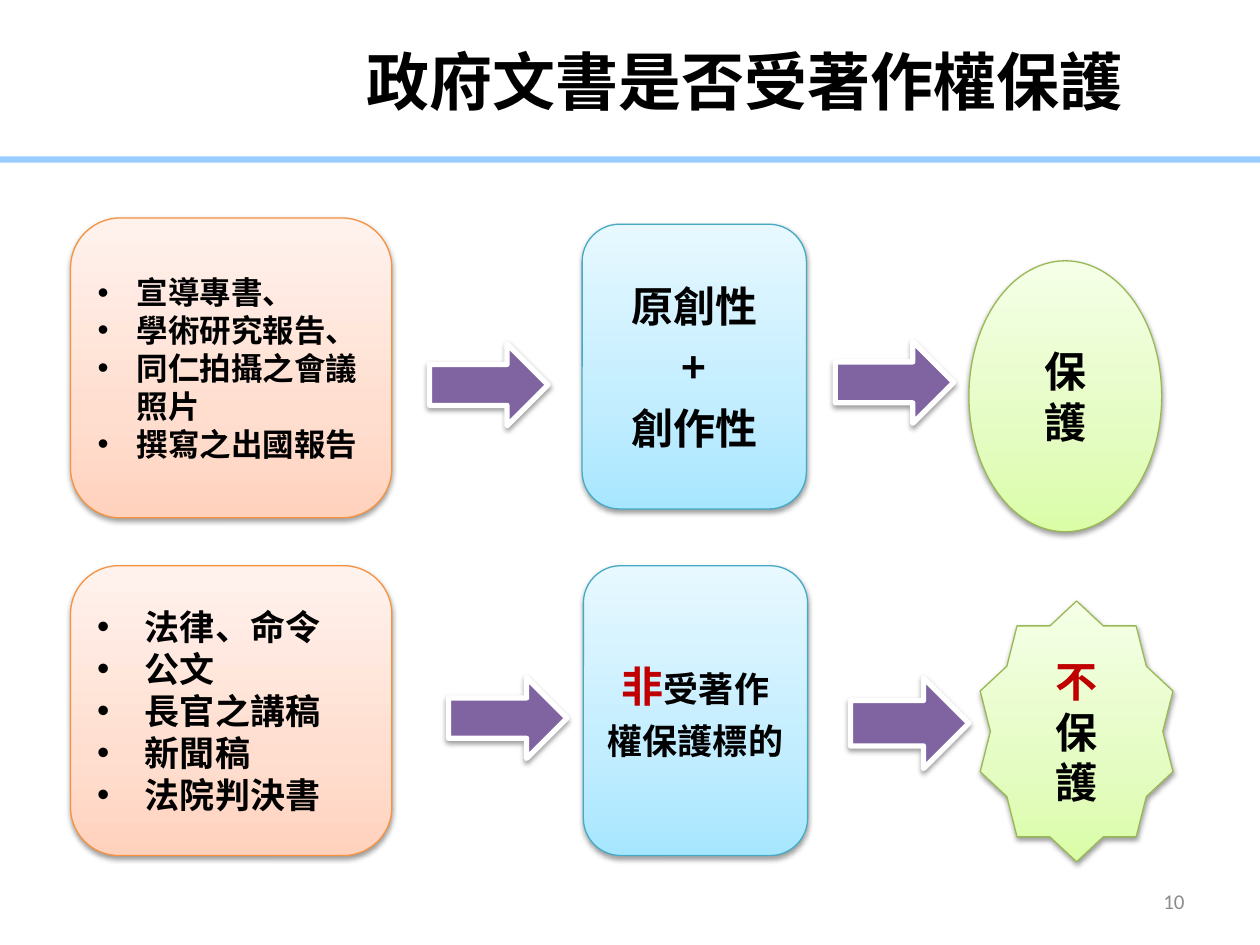
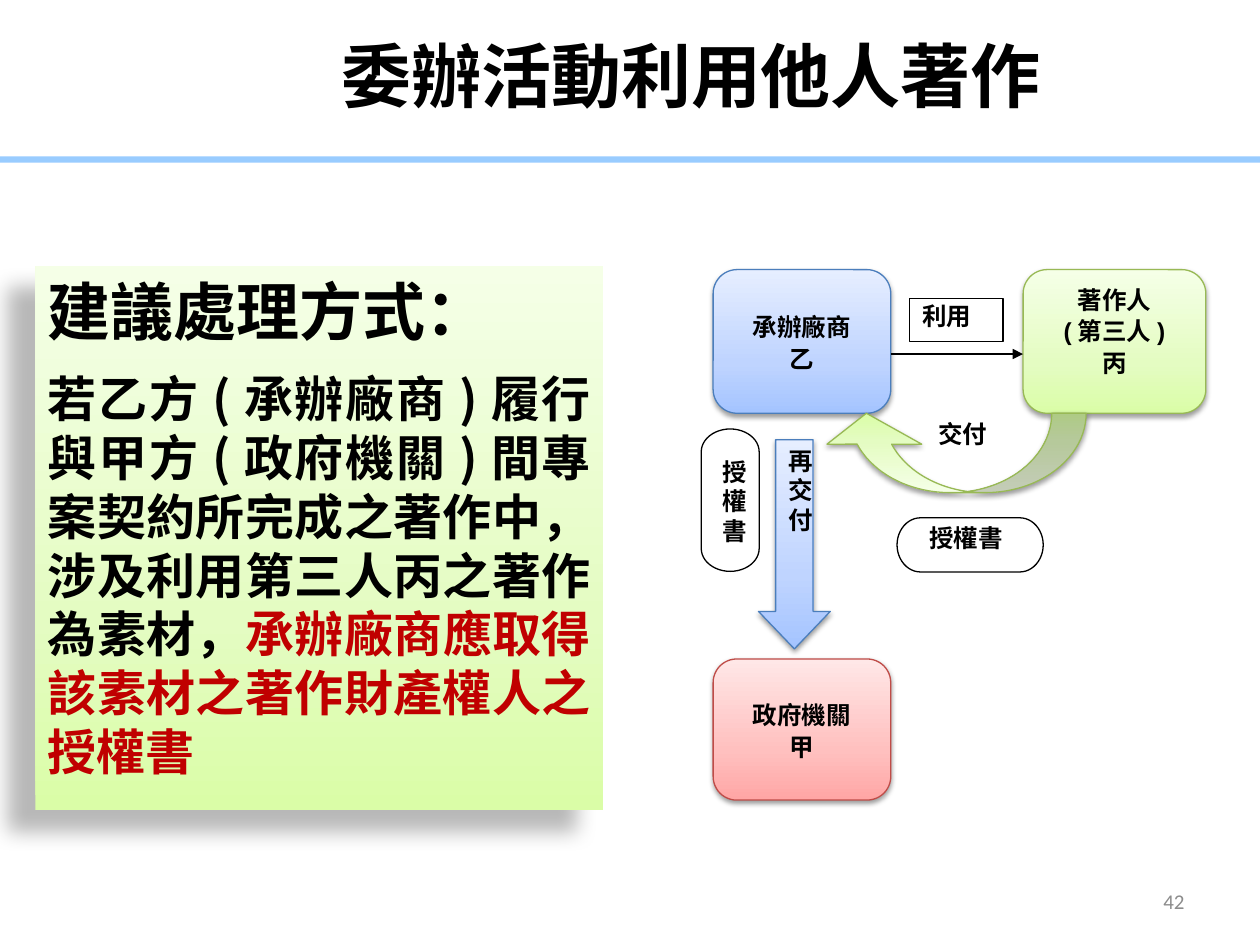
from copy import deepcopy
from dataclasses import dataclass
from typing import NamedTuple, Optional

from pptx import Presentation
from pptx.dml.color import RGBColor
from pptx.enum.shapes import MSO_CONNECTOR, MSO_SHAPE
from pptx.enum.text import MSO_ANCHOR, MSO_AUTO_SIZE, PP_ALIGN
from pptx.oxml.ns import qn
from pptx.oxml.xmlchemy import OxmlElement
from pptx.util import Emu, Inches, Pt

COLUMNS, ROWS = 100, 75
WIDTH, HEIGHT = Inches(10), Inches(7.5)
CJK, LATIN, NUMBER = "Noto Sans CJK SC", "Arial", "Calibri"
BLACK, WHITE, RED, GRAY = "000000", "FFFFFF", "C00000", "8C8C8C"
BAND, PURPLE = "99CCFF", "8064A2"
LEADING = 1.2
CENTER, LEFT, RIGHT, JUSTIFY = PP_ALIGN.CENTER, PP_ALIGN.LEFT, PP_ALIGN.RIGHT, PP_ALIGN.JUSTIFY
TOP, MIDDLE = MSO_ANCHOR.TOP, MSO_ANCHOR.MIDDLE


class Area(NamedTuple):
    """A place on the grid, in columns and rows."""
    left: float
    top: float
    width: float
    height: float


class Shadow(NamedTuple):
    """An outer shadow: opacity in percent, lengths in points, angle in degrees."""
    alpha: int
    blur: float
    distance: float
    angle: int


class Paint(NamedTuple):
    """Gradient colours from bottom to top, and the outline."""
    stops: tuple[str, str, str]
    line: str


class Span(NamedTuple):
    """A run of text."""
    text: str
    size: int
    color: str = BLACK
    font: str = CJK
    bold: bool = True


@dataclass
class Para:
    """A paragraph of spans, with its spacing in points and indent in inches."""
    spans: list[Span]
    align: Optional[int] = CENTER
    leading: float = 0
    before: float = 0
    after: float = 0
    indent: float = 0


@dataclass
class Block:
    """A preset shape with a gradient and text."""
    kind: MSO_SHAPE
    area: Area
    paint: Paint
    paras: list[Para]
    anchor: MSO_ANCHOR = MIDDLE
    adjustments: tuple[float, ...] = ()
    rotation: float = 0


SOFT = Shadow(38, 3.1, 1.6, 90)
DEEP = Shadow(28, 11.8, 19.7, 141)
ORANGE = Paint(("FFD2BD", "FFDED0", "FFF2ED"), "F69240")
GREEN = Paint(("DAFDA7", "E4FCC2", "F5FFE7"), "98B955")
AQUA = Paint(("A7E6FF", "C1EDFF", "E7F8FF"), "46AAC5")
BLUE = Paint(("A4C4FF", "BFD4FF", "E6EEFF"), "4B7EBC")
PINK = Paint(("FFA6A5", "FFC0BF", "FFE7E7"), "BF4C48")


def rgb(color: str) -> RGBColor:
    """Turn a hex string into a colour."""
    return RGBColor.from_string(color)


def across(columns: float) -> Emu:
    """Turn columns into a length."""
    return Emu(round(WIDTH * columns / COLUMNS))


def down(rows: float) -> Emu:
    """Turn rows into a length."""
    return Emu(round(HEIGHT * rows / ROWS))


def lengths(area: Area) -> tuple[Emu, Emu, Emu, Emu]:
    """Turn a grid area into lengths."""
    return across(area.left), down(area.top), across(area.width), down(area.height)


def place(shape, area: Area) -> None:
    """Move a placeholder to a grid area."""
    shape.left, shape.top, shape.width, shape.height = lengths(area)


def child(parent, tag: str, **attributes):
    """Append an XML element."""
    element = OxmlElement(tag)
    for name, value in attributes.items():
        element.set(name, str(value))
    parent.append(element)
    return element


def write(shape, paras: list[Para], anchor: MSO_ANCHOR = TOP) -> None:
    """Fill a shape with paragraphs, run by run."""
    frame = shape.text_frame
    frame.word_wrap = True
    frame.auto_size = MSO_AUTO_SIZE.NONE
    frame.vertical_anchor = anchor
    for index, item in enumerate(paras):
        para = frame.add_paragraph() if index else frame.paragraphs[0]
        properties = para._p.get_or_add_pPr()
        properties.set("marL", str(Inches(item.indent)))
        properties.set("indent", str(-Inches(item.indent)))
        if item.indent:
            child(properties, "a:buFont", typeface=LATIN)
            child(properties, "a:buChar", char="•")
        else:
            child(properties, "a:buNone")
        para.alignment = item.align
        para.line_spacing = Pt(item.leading or LEADING * max(span.size for span in item.spans))
        para.space_before, para.space_after = Pt(item.before), Pt(item.after)
        for span in item.spans:
            run = para.add_run()
            run.text = span.text
            run.font.size, run.font.bold = Pt(span.size), span.bold
            run.font.color.rgb = rgb(span.color)
            run.font.name = span.font
            child(run._r.get_or_add_rPr(), "a:ea", typeface=CJK)


def lines(texts: list[str], size: int, **options) -> list[Para]:
    """Make one paragraph for each text."""
    font = options.pop("font", CJK)
    return [Para([Span(text, size, font=font)], **options) for text in texts]


def cast(shape, shadow: Shadow) -> None:
    """Give a shape an outer shadow."""
    shape.shadow.inherit = False
    effects = shape._element.spPr.find(qn("a:effectLst"))
    outer = child(effects, "a:outerShdw", blurRad=Pt(shadow.blur), dist=Pt(shadow.distance),
                  dir=shadow.angle * 60000, algn="ctr", rotWithShape=0)
    child(child(outer, "a:srgbClr", val=BLACK), "a:alpha", val=shadow.alpha * 1000)


def shade(shape, colors: tuple[str, str, str]) -> None:
    """Fill a shape with a gradient that runs upwards."""
    shape.fill.gradient()
    shape.fill.gradient_angle = 90
    stops = next(shape._element.spPr.iter(qn("a:gsLst")))
    stops.append(deepcopy(stops[-1]))
    for stop, color, position in zip(shape.fill.gradient_stops, colors, (0, 0.35, 1)):
        stop.color.rgb, stop.position = rgb(color), position


def add_plain(page, kind: MSO_SHAPE, area: Area, fill: str, line: str = "", width: float = 0.75):
    """Draw a shape with a flat fill and no shadow."""
    shape = page.shapes.add_shape(kind, *lengths(area))
    shape.fill.solid()
    shape.fill.fore_color.rgb = rgb(fill)
    if line:
        shape.line.color.rgb, shape.line.width = rgb(line), Pt(width)
    else:
        shape.line.fill.background()
    shape.shadow.inherit = False
    return shape


def add_block(page, block: Block) -> None:
    """Draw a gradient block with its text."""
    shape = page.shapes.add_shape(block.kind, *lengths(block.area))
    for index, value in enumerate(block.adjustments):
        shape.adjustments[index] = value
    shape.rotation = block.rotation
    shade(shape, block.paint.stops)
    shape.line.color.rgb, shape.line.width = rgb(block.paint.line), Pt(0.75)
    cast(shape, SOFT)
    if block.paras:
        write(shape, block.paras, block.anchor)


def add_text(page, area: Area, paras: list[Para], anchor: MSO_ANCHOR = TOP) -> None:
    """Add a text box."""
    write(page.shapes.add_textbox(*lengths(area)), paras, anchor)


def add_page(deck, layout: int, title: str, size: int, area: Area, number: str):
    """Add a page with its title and number."""
    page = deck.slides.add_slide(deck.slide_layouts[layout])
    place(page.shapes.title, area)
    write(page.shapes.title, lines([title], size))
    label = Span(number, 12, GRAY, NUMBER, False)
    add_text(page, Area(71.7, 69.5, 23.3, 4), [Para([label], RIGHT)], MIDDLE)
    return page


def add_band(deck, page) -> None:
    """Put the blue band on the slide master."""
    band = add_plain(page, MSO_SHAPE.RECTANGLE, Area(-0.4, 12.4, 100.6, 0.5), BAND)
    deck.slide_master.shapes._spTree.insert(2, band._element)


def draw_protection(page) -> None:
    """Draw the two rows that lead from documents to protection."""
    rounded = MSO_SHAPE.ROUNDED_RECTANGLE
    reports = ["宣導專書、", "學術研究報告、", "同仁拍攝之會議照片", "撰寫之出國報告"]
    official = ["法律、命令", "公文", "長官之講稿", "新聞稿", "法院判決書"]
    refusal = [Para([Span("不", 24, RED)])] + lines(["保", "護"], 24)
    excluded = [Para([Span("非", 24, RED), Span("受著作權保護標的", 20)])]
    for block in (
        Block(rounded, Area(5.6, 17.3, 25.5, 23.8), ORANGE, lines(reports, 18, align=LEFT, indent=0.31)),
        Block(rounded, Area(5.6, 44.9, 25.5, 23), ORANGE, lines(official, 20, align=LEFT, indent=0.38)),
        Block(rounded, Area(46.2, 17.8, 17.8, 22.6), AQUA, lines(["原創性", "+", "創作性"], 24, after=6)),
        Block(rounded, Area(46.3, 44.9, 17.8, 23), AQUA, excluded),
        Block(MSO_SHAPE.OVAL, Area(76.9, 20.7, 15.3, 21.5), GREEN, lines(["保", "護"], 24)),
        Block(MSO_SHAPE.STAR_10_POINT, Area(77.8, 47.7, 15.3, 20.7), GREEN, refusal),
    ):
        add_block(page, block)
    for left, top, height in ((34.1, 27.3, 6.5), (66.3, 27.1, 6.5), (35.6, 53.8, 6.4), (67.5, 53.8, 7.2)):
        arrow = add_plain(page, MSO_SHAPE.RIGHT_ARROW, Area(left, top, 9.4, height), PURPLE, WHITE, 3)
        cast(arrow, SOFT)


def draw_advice(page) -> None:
    """Write the advice in the body placeholder."""
    body = page.placeholders[1]
    place(body, Area(2.8, 21.1, 45.1, 43.2))
    shade(body, GREEN.stops)
    cast(body, DEEP)
    duty = "若乙方(承辦廠商)履行與甲方(政府機關)間專案契約所完成之著作中，涉及利用第三人丙之著作為素材，"
    demand = "承辦廠商應取得該素材之著作財產權人之授權書"
    write(body, [
        Para([Span("建議處理方式：", 36)], JUSTIFY),
        Para([Span(duty, 28), Span(demand, 28, RED)], JUSTIFY, before=12, after=12),
    ])


def draw_parties(page) -> None:
    """Draw the parties and the licences that pass between them."""
    rounded, corner = MSO_SHAPE.ROUNDED_RECTANGLE, (0.167,)
    party = {"size": 14, "font": LATIN, "leading": 18}
    note = {"size": 14, "font": LATIN}
    for block in (
        Block(rounded, Area(56.6, 21.4, 14.1, 11.4), BLUE, lines(["承辦廠商", "乙"], **party), MIDDLE, corner),
        Block(rounded, Area(81.2, 21.4, 14.5, 11.4), GREEN, lines(["著作人", "(第三人)", "丙"], **party), TOP, corner),
        Block(rounded, Area(56.6, 52.3, 14.1, 11.2), PINK, lines(["政府機關", "甲"], **party), MIDDLE, corner),
        Block(MSO_SHAPE.CURVED_DOWN_ARROW, Area(65, 32.8, 21.2, 6.3), GREEN, [], TOP, (0.434, 1.193, 0.389), 180),
        Block(MSO_SHAPE.DOWN_ARROW, Area(60.2, 34.9, 5.7, 16.6), BLUE,
              lines(["再交付"], align=JUSTIFY, **note), TOP, (0.522, 0.521)),
    ):
        add_block(page, block)
    add_text(page, Area(72.4, 32.8, 8, 3.5), lines(["交付"], **note))

    use = page.shapes.add_connector(MSO_CONNECTOR.STRAIGHT, across(70.7), down(28.1), across(81.2), down(28.1))
    use.line.color.rgb, use.line.width = rgb(BLACK), Pt(0.75)
    child(use.line._get_or_add_ln(), "a:tailEnd", type="triangle")
    child(use._element.spPr, "a:effectLst")
    label = add_plain(page, MSO_SHAPE.RECTANGLE, Area(72.2, 23.7, 7.4, 3.4), WHITE, BLACK)
    write(label, lines(["利用"], align=JUSTIFY, leading=12, **note), MIDDLE)

    terminator = MSO_SHAPE.FLOWCHART_TERMINATOR
    licence = add_plain(page, terminator, Area(71.2, 41.1, 11.6, 4.3), WHITE, BLACK)
    licence.text_frame.margin_left = across(2)
    write(licence, lines(["授權書"], align=LEFT, leading=12, **note))
    upright = add_plain(page, terminator, Area(52.3, 37.4, 11.3, 4.6), WHITE, BLACK)
    upright.rotation = 90
    add_text(page, Area(55.8, 34.1, 5, 11.3), lines(["授", "權", "書"], **note), MIDDLE)


def main() -> None:
    """Build the deck."""
    deck = Presentation()
    deck.slide_width, deck.slide_height = WIDTH, HEIGHT
    page = add_page(deck, 5, "政府文書是否受著作權保護", 36, Area(20.9, 2.9, 76.4, 8.1), "10")
    add_band(deck, page)
    draw_protection(page)
    page = add_page(deck, 1, "委辦活動利用他人著作", 40, Area(13, 2.1, 83.7, 10.4), "42")
    draw_advice(page)
    draw_parties(page)
    deck.save("out.pptx")


if __name__ == "__main__":
    main()
